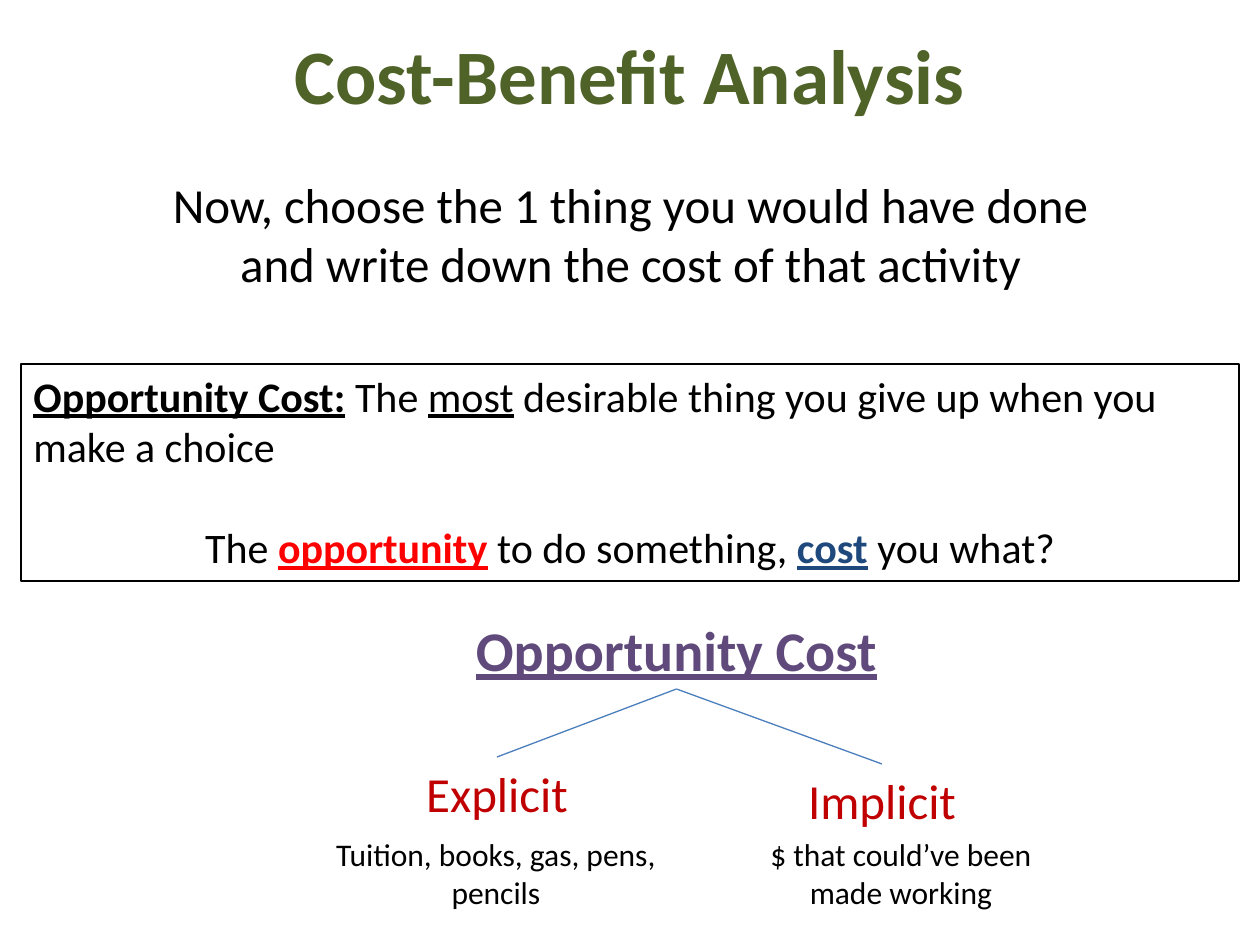
from lxml import etree
from pptx import Presentation
from pptx import util as u
from pptx.dml.color import RGBColor
from pptx.enum import shapes, text
from pptx.oxml.ns import qn

EMU_PER_PX = 914400 / 126
BLACK, GREEN, PURPLE, CRIMSON = "000000", "4F6228", "604A7B", "C00000"
RED, NAVY, BLUE = "FF0000", "1F497D", "4B7EBC"
STRONG = {"bold": True, "underline": True}
CENTER, LEFT = text.PP_ALIGN.CENTER, text.PP_ALIGN.LEFT


def px(length):
    return u.Emu(round(length * EMU_PER_PX))


def color(value):
    return RGBColor.from_string(value)


def add_run(paragraph, words, size, fill=BLACK, **formats):
    run = paragraph.add_run()
    run.text = words
    run.font.color.rgb = color(fill)
    for name, value in {"name": "Calibri", "size": u.Pt(size), **formats}.items():
        setattr(run.font, name, value)


def add_label(slide, box, words, size, fill=BLACK, **formats):
    """Add a wrapped text box holding one centred paragraph."""
    shape = slide.shapes.add_textbox(*map(px, box))
    shape.text_frame.word_wrap = True
    paragraph = shape.text_frame.paragraphs[0]
    paragraph.alignment = CENTER
    add_run(paragraph, words, size, fill, **formats)
    return shape


def add_definition(slide, box, paragraphs, size):
    """Add an outlined rectangle; each paragraph is (format values, runs)."""
    shape = slide.shapes.add_shape(shapes.MSO_SHAPE.RECTANGLE, *map(px, box))
    shape.shadow.inherit = False
    shape.fill.background()
    shape.line.color.rgb = color(BLACK)
    shape.line.width = u.Pt(0.75)
    frame = shape.text_frame
    frame.word_wrap = True
    frame.vertical_anchor = text.MSO_ANCHOR.TOP
    for index, (formats, runs) in enumerate(paragraphs):
        paragraph = frame.add_paragraph() if index else frame.paragraphs[0]
        for name, value in formats.items():
            setattr(paragraph, name, value)
        for words, run_formats in runs:
            add_run(paragraph, words, size, **run_formats)


def add_branch(slide, parent, child):
    """Join the top of the child to the bottom of the parent."""
    connector = slide.shapes.add_connector(shapes.MSO_CONNECTOR.STRAIGHT, 0, 0, 0, 0)
    connector.begin_connect(child, 0)
    connector.end_connect(parent, 2)
    connector.line.color.rgb = color(BLUE)
    connector.line.width = u.Pt(0.75)
    etree.SubElement(connector._element.spPr, qn("a:effectLst"))


def main():
    presentation = Presentation()
    presentation.slide_width, presentation.slide_height = px(1260), px(945)
    slide = presentation.slides.add_slide(presentation.slide_layouts[6])

    add_label(slide, (231, 21, 798, 106), "Cost-Benefit Analysis", 44, GREEN, bold=True)
    add_definition(slide, (21, 364, 1218, 217), [
        ({"alignment": LEFT}, [
            ("Opportunity Cost:", STRONG),
            (" The ", {}),
            ("most", {"underline": True}),
            (" desirable thing you give up when you make a choice", {}),
        ]),
        ({"alignment": CENTER, "space_before": u.Pt(29)}, [
            ("The ", {}),
            ("opportunity", {"fill": RED, **STRONG}),
            (" to do something, ", {}),
            ("cost", {"fill": NAVY, **STRONG}),
            (" you what?", {}),
        ]),
    ], 24)
    add_label(slide, (158, 168, 945, 131),
              "Now, choose the 1 thing you would have done and write down "
              "the cost of that activity", 28)

    heading = add_label(slide, (325, 609, 703, 80), "Opportunity Cost", 32, PURPLE, **STRONG)
    kinds = [
        ("Explicit", 392, 757, "Tuition, books, gas, pens, pencils", 320),
        ("Implicit", 777, 764, "$ that could’ve been made working", 725),
    ]
    for kind, left, top, examples, examples_left in kinds:
        label = add_label(slide, (left, top, 210, 72), kind, 28, CRIMSON)
        add_branch(slide, heading, label)
        add_label(slide, (examples_left, 829, 352, 89), examples, 18)

    presentation.save("out.pptx")


if __name__ == "__main__":
    main()
